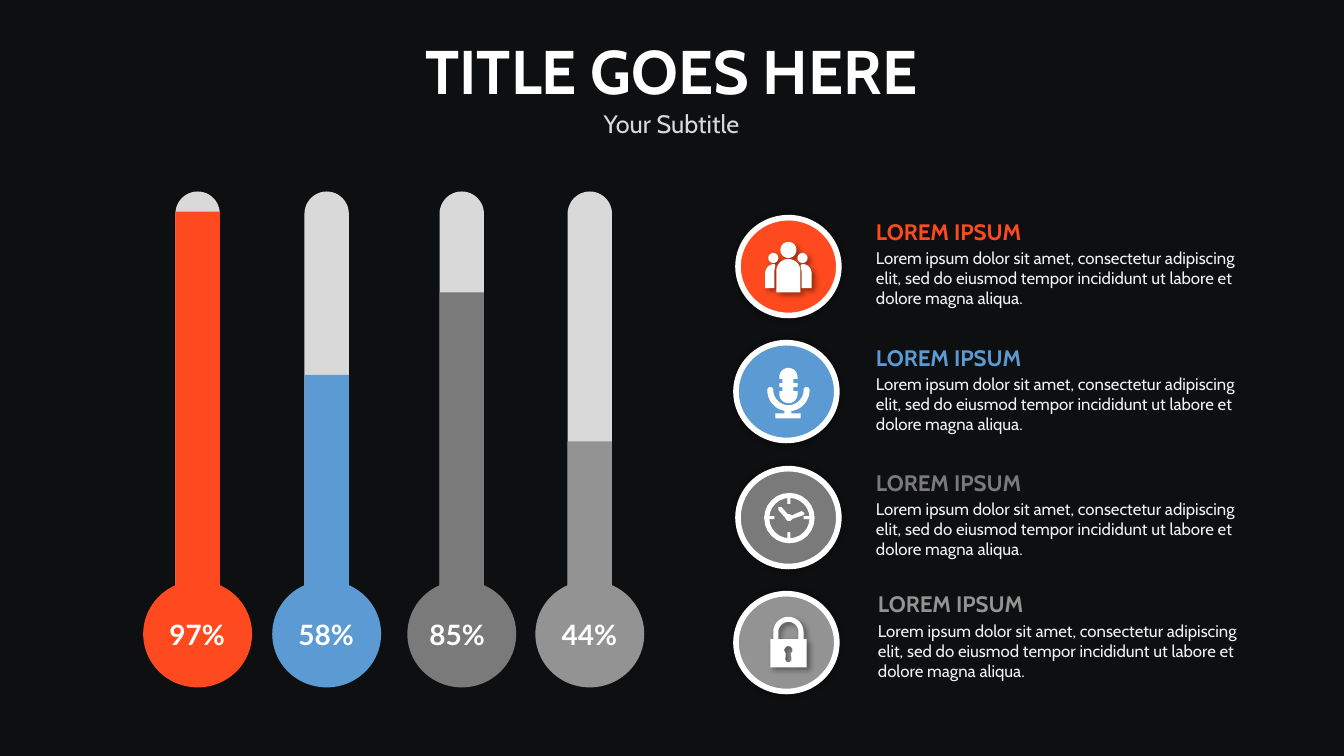
from math import cos, radians, sin

from lxml.etree import SubElement
from pptx import Presentation
from pptx.dml.color import RGBColor
from pptx.enum.shapes import MSO_SHAPE
from pptx.enum.text import MSO_ANCHOR, MSO_AUTO_SIZE, PP_ALIGN
from pptx.oxml.ns import qn
from pptx.util import Inches, Pt

BLACK = RGBColor(0x0E, 0x0F, 0x11)
WHITE = RGBColor(0xFF, 0xFF, 0xFF)
PALE = RGBColor(0xF2, 0xF2, 0xF2)
SILVER = RGBColor(0xD9, 0xD9, 0xD9)
ORANGE = RGBColor(0xFE, 0x4A, 0x1E)
BLUE = RGBColor(0x5C, 0x9A, 0xD3)
DARK_GRAY = RGBColor(0x7A, 0x7A, 0x7A)
GRAY = RGBColor(0x93, 0x93, 0x93)

LOREM = ("Lorem ipsum dolor sit amet, consectetur adipiscing elit, sed do "
         "eiusmod tempor incididunt ut labore et dolore magna aliqua.")


def write(tf, text, size, color, bold=False, font="Cabin",
          align=PP_ALIGN.LEFT, before=0, spacing=1.0):
    """Fill the empty first paragraph of a frame, or add one after it."""
    tf.word_wrap = True
    p = tf.add_paragraph() if tf.text else tf.paragraphs[0]
    p.alignment, p.line_spacing, p.space_before = align, spacing, Pt(before)
    r = p.add_run()
    r.text = text
    r.font.name, r.font.size, r.font.bold = font, Pt(size), bold
    r.font.color.rgb = color


def paint(sp, color, shadow=None):
    """Give a flat fill; shadow is (blur pt, distance pt, angle in degrees)."""
    sp.fill.solid()
    sp.fill.fore_color.rgb = color
    sp.line.fill.background()
    sp.shadow.inherit = False
    if shadow:
        blur, dist, angle = shadow
        effects = sp._element.spPr.find(qn("a:effectLst"))
        outer = SubElement(effects, qn("a:outerShdw"), blurRad=str(Pt(blur)),
                           dist=str(Pt(dist)), dir=str(angle * 60000),
                           algn="ctr", rotWithShape="0")
        black = SubElement(outer, qn("a:srgbClr"), val="000000")
        SubElement(black, qn("a:alpha"), val="40000")


prs = Presentation()
prs.slide_width, prs.slide_height = Inches(13.33), Inches(7.5)
s = prs.slides.add_slide(prs.slide_layouts[0])
s.background.fill.solid()
s.background.fill.fore_color.rgb = BLACK

# Title and subtitle
for sp, top, height, text, size, color, bold in [
        (s.shapes.title, 0.28, 0.84, "TITLE GOES HERE", 44, WHITE, True),
        (s.placeholders[1], 1.02, 0.4, "Your Subtitle", 18, SILVER, False)]:
    sp.left, sp.top = Inches(3.65), Inches(top)
    sp.width, sp.height = Inches(6.02), Inches(height)
    sp.text_frame.auto_size = MSO_AUTO_SIZE.NONE
    sp.text_frame.vertical_anchor = MSO_ANCHOR.TOP
    write(sp.text_frame, text, size, color, bold, align=PP_ALIGN.CENTER)

# Thermometers: left edge, top of the filled part, label left, label, colour
TUBE_TOP, TUBE_BOTTOM, TUBE_WIDTH = 1.9, 6.13, 0.44
for x, level, label_x, label, color in [
        (1.74, 2.1, 1.37, "97%", ORANGE),
        (3.02, 3.72, 2.65, "58%", BLUE),
        (4.36, 2.9, 3.95, "85%", DARK_GRAY),
        (5.63, 4.38, 5.26, "44%", GRAY)]:
    tube = s.shapes.add_shape(
        MSO_SHAPE.ROUND_2_SAME_RECTANGLE, Inches(x), Inches(TUBE_TOP),
        Inches(TUBE_WIDTH), Inches(TUBE_BOTTOM - TUBE_TOP))
    tube.adjustments[0] = 0.5
    paint(tube, SILVER)
    paint(s.shapes.add_shape(
        MSO_SHAPE.RECTANGLE, Inches(x), Inches(level),
        Inches(TUBE_WIDTH), Inches(TUBE_BOTTOM - level)), color)
    paint(s.shapes.add_shape(
        MSO_SHAPE.OVAL, Inches(x - 0.32), Inches(5.76),
        Inches(1.08), Inches(1.06)), color)
    box = s.shapes.add_textbox(Inches(label_x), Inches(5.91),
                               Inches(1.17), Inches(0.55))
    write(box.text_frame, label, 20, WHITE, True, "Lato",
          PP_ALIGN.CENTER, spacing=1.5)

# Legend: text left and top, badge left and top, colour
for x, y, badge_x, badge_y, color in [
        (8.59, 2.11, 7.32, 2.16, ORANGE),
        (8.59, 3.36, 7.3, 3.4, BLUE),
        (8.59, 4.6, 7.32, 4.65, DARK_GRAY),
        (8.61, 5.81, 7.3, 5.89, GRAY)]:
    box = s.shapes.add_textbox(Inches(x), Inches(y), Inches(4), Inches(1.02))
    write(box.text_frame, "LOREM IPSUM", 16, color, True)
    write(box.text_frame, LOREM, 12, PALE, before=2.4)
    badge = s.shapes.add_shape(MSO_SHAPE.OVAL, Inches(badge_x),
                               Inches(badge_y), Inches(1), Inches(0.97))
    paint(badge, color, (5, 0, 0))
    badge.line.color.rgb = WHITE
    badge.line.width = Pt(4)

# Icon outlines: a contour lists points (x, y) and
# arcs (centre x, centre y, radius, start angle, end angle)
PEOPLE = [
    [(7.82, 2.48, 0.08, 0, 360)],
    [(7.67, 2.56, 0.05, 0, 360)],
    [(7.96, 2.56, 0.05, 0, 360)],
    [(7.82, 2.69, 0.12, 180, 360), (7.94, 2.9), (7.7, 2.9)],
    [(7.68, 2.71, 0.09, 180, 270), (7.69, 2.63), (7.68, 2.69),
     (7.68, 2.86), (7.59, 2.86)],
    [(7.96, 2.71, 0.09, 270, 360), (8.05, 2.86), (7.95, 2.86),
     (7.95, 2.69), (7.94, 2.63)]]
PADLOCK = [
    [(7.82, 6.27, 0.15, 180, 360), (7.97, 6.34), (8, 6.34), (8, 6.62),
     (7.64, 6.62), (7.64, 6.34), (7.67, 6.34)],
    [(7.82, 6.27, 0.1, 180, 360), (7.92, 6.34), (7.72, 6.34)],
    [(7.82, 6.45, 0.04, 130, 410), (7.82, 6.54, 0.03, 0, 180)]]
CLOCK_FACE = [[(7.83, 5.14, 0.25, 0, 360)], [(7.83, 5.14, 0.2, 0, 360)]]
HOUR_HAND = [[(7.83, 5.12), (7.8, 5.15), (7.72, 5.06), (7.72, 5.03),
              (7.75, 5.03)]]
MINUTE_HAND = [[(7.85, 5.15), (7.84, 5.12), (7.95, 5.07), (7.98, 5.09),
                (7.97, 5.11)]]
MIC_CRADLE = [[(7.82, 3.87, 0.21, 0, 180), (7.64, 3.87, 0.03, 180, 360),
               (7.82, 3.87, 0.15, 180, 0), (8, 3.87, 0.03, 180, 360)]]
MIC_HEAD = [[
    (7.82, 3.74, 0.09, 180, 360), (7.91, 3.76), (7.87, 3.76), (7.87, 3.8),
    (7.91, 3.8), (7.91, 3.84), (7.87, 3.84), (7.87, 3.88), (7.91, 3.88),
    (7.82, 3.91, 0.09, 0, 180), (7.73, 3.88), (7.76, 3.88), (7.76, 3.84),
    (7.73, 3.84), (7.73, 3.8), (7.76, 3.8), (7.76, 3.76), (7.73, 3.76)]]

clock = s.shapes.add_group_shape().shapes
mic = s.shapes.add_group_shape().shapes
ICON_SHADOW = (4, 3, 45)
ARC_STEPS = 24
UNITS = 1000  # drawing units per inch

for shapes, contours, shadow in [
        (s.shapes, PEOPLE, ICON_SHADOW), (s.shapes, PADLOCK, ICON_SHADOW),
        (clock, HOUR_HAND, None), (clock, MINUTE_HAND, None),
        (clock, CLOCK_FACE, None),
        (mic, MIC_CRADLE, None), (mic, MIC_HEAD, None)]:
    builder = None
    for contour in contours:
        points = []
        for x, y, *arc in contour:
            if arc:
                radius, start, end = arc
                angles = [radians(start + (end - start) * i / ARC_STEPS)
                          for i in range(ARC_STEPS + 1)]
                points += [((x + radius * cos(a)) * UNITS,
                            (y + radius * sin(a)) * UNITS) for a in angles]
            else:
                points.append((x * UNITS, y * UNITS))
        if builder:
            builder.move_to(*points[0])
        else:
            builder = shapes.build_freeform(*points[0],
                                            scale=Inches(1) / UNITS)
        builder.add_line_segments(points[1:], close=True)
    paint(builder.convert_to_shape(), WHITE, shadow)

# Clock hub and ticks, microphone stem and foot
for shapes, kind, x, y, w, h in [
        (clock, MSO_SHAPE.OVAL, 7.79, 5.1, 0.07, 0.07),
        (clock, MSO_SHAPE.ROUNDED_RECTANGLE, 7.81, 5.28, 0.03, 0.1),
        (clock, MSO_SHAPE.ROUNDED_RECTANGLE, 7.81, 4.9, 0.03, 0.1),
        (clock, MSO_SHAPE.ROUNDED_RECTANGLE, 7.97, 5.12, 0.1, 0.03),
        (clock, MSO_SHAPE.ROUNDED_RECTANGLE, 7.58, 5.12, 0.1, 0.03),
        (mic, MSO_SHAPE.RECTANGLE, 7.78, 4.06, 0.07, 0.07),
        (mic, MSO_SHAPE.RECTANGLE, 7.69, 4.1, 0.25, 0.05)]:
    paint(shapes.add_shape(kind, Inches(x), Inches(y),
                           Inches(w), Inches(h)), WHITE)

prs.save("out.pptx")
